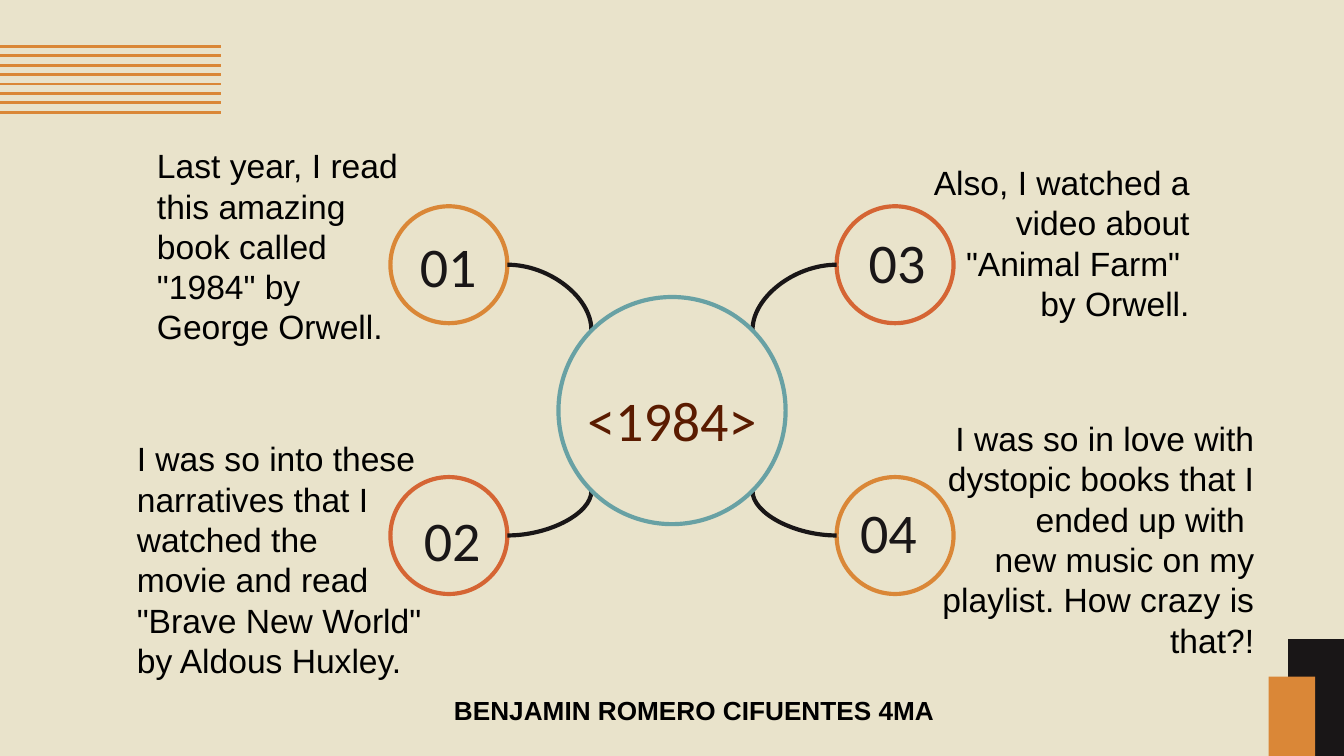
from dataclasses import dataclass

from pptx import Presentation
from pptx.dml.color import RGBColor
from pptx.enum.shapes import MSO_CONNECTOR, MSO_SHAPE
from pptx.enum.text import MSO_ANCHOR, MSO_AUTO_SIZE, PP_ALIGN
from pptx.oxml.ns import qn
from pptx.oxml.xmlchemy import OxmlElement
from pptx.util import Pt

PX = 4572  # EMU per px, 200 px to the inch
COLORS = {
    "paper": "E9E3CB", "ink": "191617", "orange": "DA8737", "red": "D56534",
    "teal": "68A1A4", "brown": "5A1B00", "black": "000000",
}
RING, HUB = 174, 338


@dataclass
class Box:
    left: int
    top: int
    width: int
    height: int

    def emu(self) -> tuple[int, ...]:
        return tuple(v * PX for v in (self.left, self.top, self.width, self.height))


@dataclass
class Topic:
    number: str
    number_box: Box
    ring: Box
    color: str
    text_box: Box
    align: PP_ALIGN
    paragraphs: list[str]
    link: tuple[int, int, int, int]


def rgb(name: str) -> RGBColor:
    return RGBColor.from_string(COLORS[name])


def set_text(sp, paragraphs: list[str], font: str, size: int, color: str,
             align: PP_ALIGN, inset: int = 20, wrap: bool = True) -> None:
    tf = sp.text_frame
    tf.word_wrap = wrap
    tf.auto_size = MSO_AUTO_SIZE.NONE
    tf.vertical_anchor = MSO_ANCHOR.MIDDLE
    tf.margin_left = tf.margin_right = 20 * PX
    tf.margin_top = tf.margin_bottom = inset * PX
    tf.text = "\n".join(paragraphs)
    for p in tf.paragraphs:
        p.alignment = align
        p.font.name, p.font.size = font, Pt(size)
        p.font.color.rgb = rgb(color)


def add_ring(s, box: Box, color: str) -> None:
    sp = s.shapes.add_shape(MSO_SHAPE.OVAL, *box.emu())
    sp.shadow.inherit = False
    sp.fill.background()
    sp.line.color.rgb = rgb(color)
    sp.line.width = Pt(2.25)


def add_block(s, box: Box, color: str) -> None:
    sp = s.shapes.add_shape(MSO_SHAPE.RECTANGLE, *box.emu())
    sp.shadow.inherit = False
    sp.fill.solid()
    sp.fill.fore_color.rgb = rgb(color)
    sp.line.fill.background()


def add_line(s, kind: MSO_CONNECTOR, ends: tuple[int, int, int, int],
             color: str, width: float) -> None:
    line = s.shapes.add_connector(kind, *(v * PX for v in ends))
    line.line.color.rgb = rgb(color)
    line.line.width = Pt(width)
    spPr = line._element.spPr
    spPr.append(OxmlElement("a:effectLst"))
    if kind == MSO_CONNECTOR.CURVE:  # a single quarter bend
        spPr.find(qn("a:prstGeom")).set("prst", "curvedConnector2")


TOPICS = [
    Topic("01", Box(597, 356, 140, 76), Box(581, 307, RING, RING), "orange",
          Box(214, 189, 414, 354), PP_ALIGN.LEFT,
          ['Last year, I read this amazing book called "1984" by George Orwell.'],
          (755, 394, 880, 491)),
    Topic("02", Box(595, 764, 156, 76), Box(581, 710, RING, RING), "red",
          Box(184, 664, 528, 336), PP_ALIGN.LEFT,
          ["I was so into these narratives that I watched the",
           'movie and read "Brave New World" by Aldous Huxley.'],
          (755, 797, 880, 731)),
    Topic("03", Box(1257, 344, 156, 88), Box(1245, 307, RING, RING), "red",
          Box(1328, 198, 462, 326), PP_ALIGN.RIGHT,
          ['Also, I watched a video about "Animal Farm" ', "by Orwell."],
          (1245, 394, 1120, 491)),
    Topic("04", Box(1244, 746, 156, 88), Box(1245, 710, RING, RING), "orange",
          Box(1371, 547, 515, 510), PP_ALIGN.RIGHT,
          ["I was so in love with dystopic books that I ended up with ",
           "new music on my playlist. How crazy is that?!"],
          (1245, 797, 1120, 731)),
]


def main() -> None:
    prs = Presentation()
    prs.slide_width, prs.slide_height = 2000 * PX, 1125 * PX
    s = prs.slides.add_slide(prs.slide_layouts[5])
    s.background.fill.solid()
    s.background.fill.fore_color.rgb = rgb("paper")

    # Corner decorations
    for i in range(8):
        y = 69 + 14 * i
        add_line(s, MSO_CONNECTOR.STRAIGHT, (0, y, 329, y), "orange", 1.5)
    add_block(s, Box(1917, 951, 83, 174), "ink")
    add_block(s, Box(1888, 1007, 69, 118), "orange")

    # Numbered topics, each linked to the hub
    for t in TOPICS:
        add_ring(s, t.ring, t.color)
        number = s.shapes.add_textbox(*t.number_box.emu())
        set_text(number, [t.number], "Calibri", 30, "ink", PP_ALIGN.CENTER)
        body = s.shapes.add_textbox(*t.text_box.emu())
        set_text(body, t.paragraphs, "Arial", 18, "black", t.align)
        add_line(s, MSO_CONNECTOR.CURVE, t.link, "ink", 2.25)

    # Hub with the title
    add_ring(s, Box(831, 442, HUB, HUB), "teal")
    title = s.shapes.title
    title.left, title.top, title.width, title.height = Box(818, 572, 364, 88).emu()
    set_text(title, ["<1984>"], "Calibri", 30, "brown", PP_ALIGN.CENTER)
    title.text_frame.paragraphs[0].line_spacing = 1.15

    # Author
    author = s.shapes.add_textbox(*Box(656, 1023, 772, 68).emu())
    set_text(author, ["BENJAMIN ROMERO CIFUENTES 4MA"], "Arial", 14, "black",
             PP_ALIGN.LEFT, inset=10, wrap=False)
    author.text_frame.paragraphs[0].font.bold = True

    prs.save("out.pptx")


if __name__ == "__main__":
    main()
